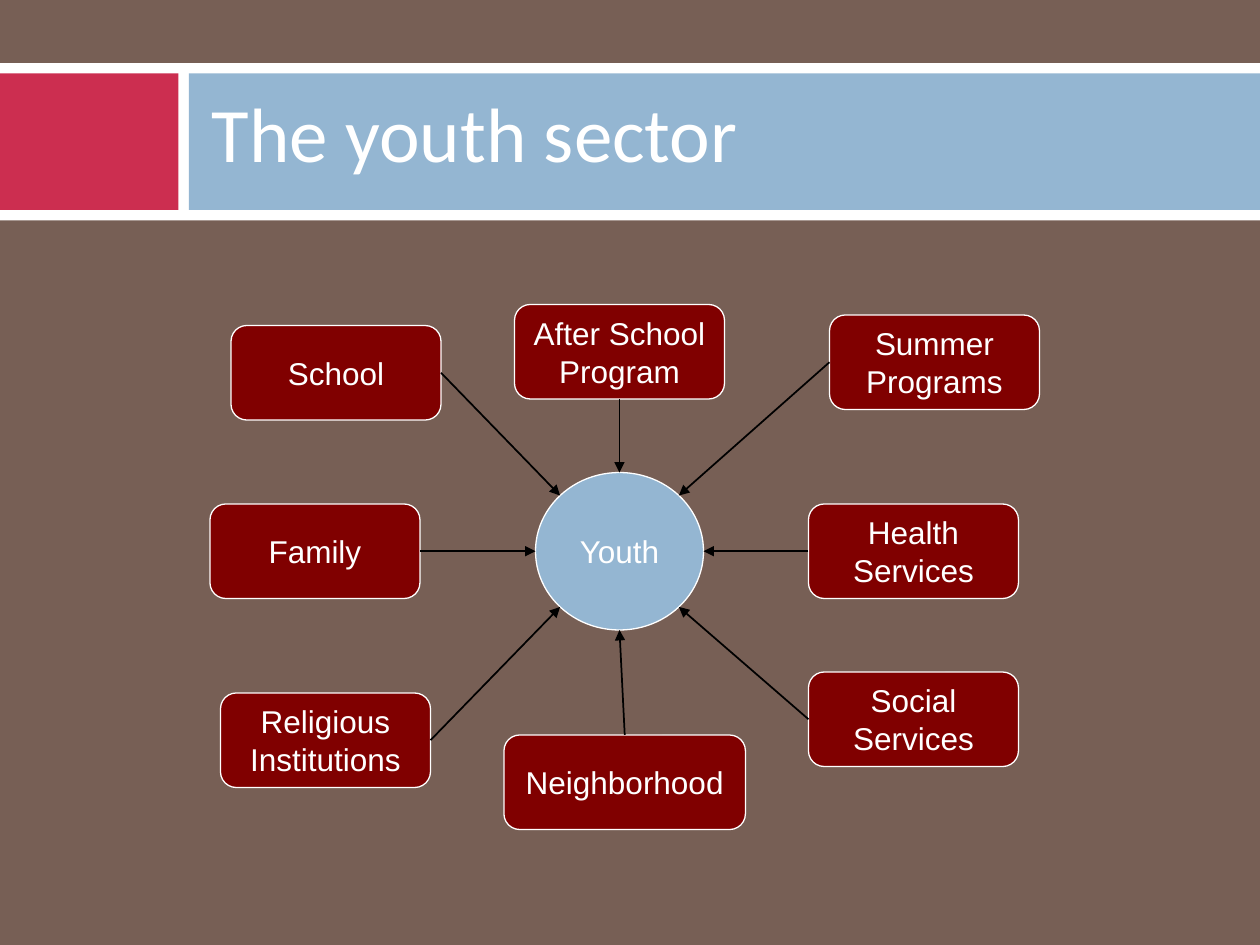
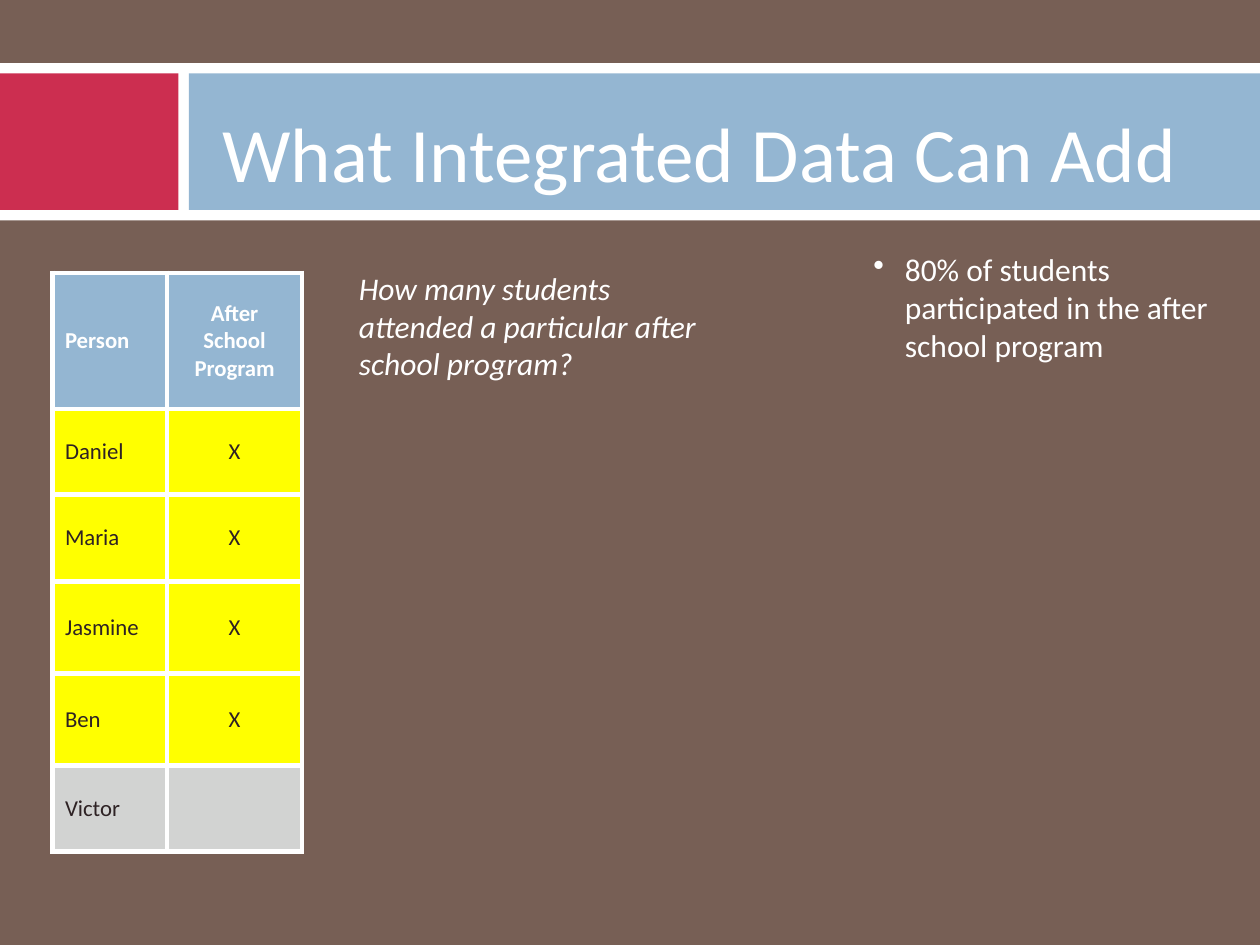
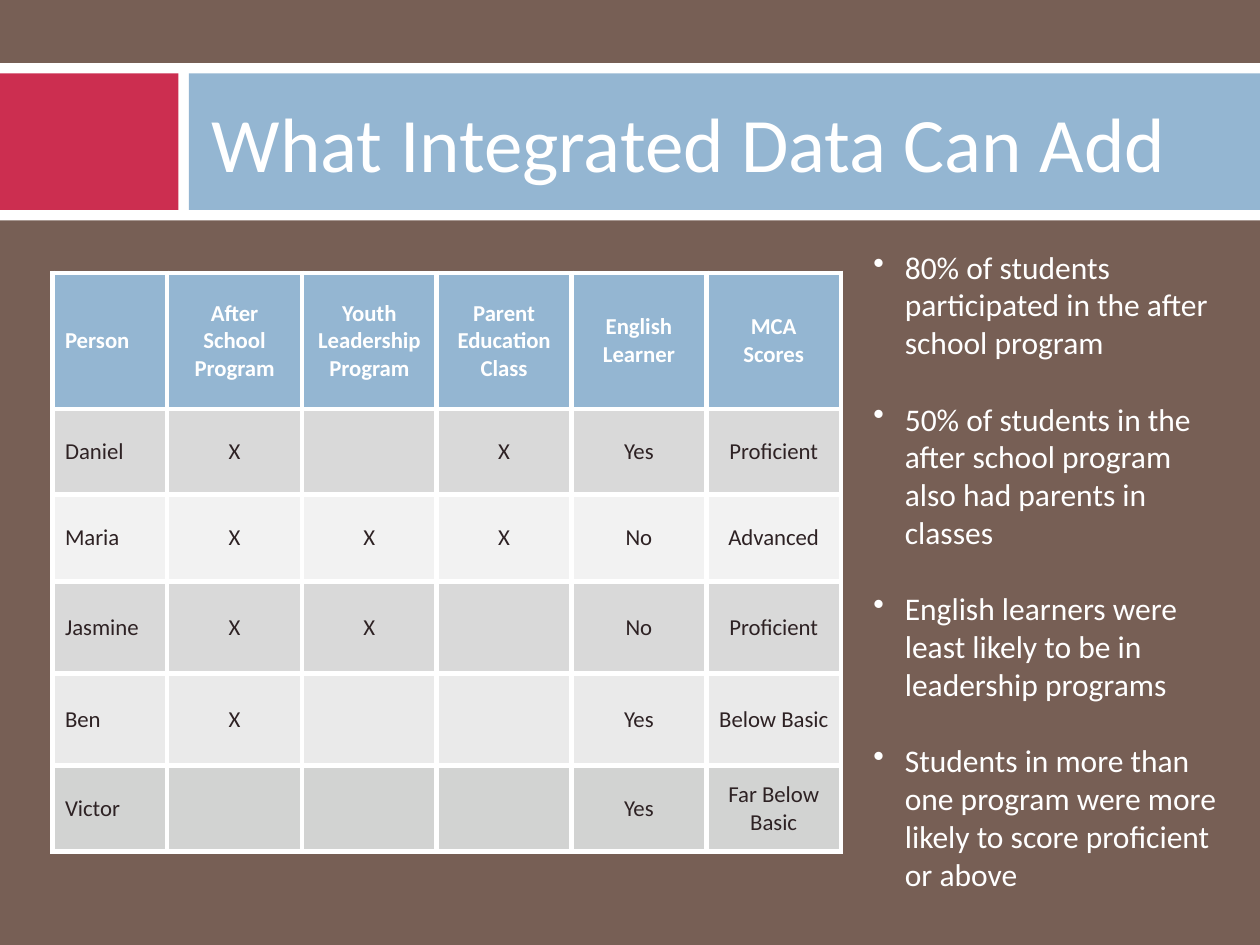
from math import hypot

from lxml.etree import SubElement
from pptx import Presentation
from pptx.dml.color import RGBColor
from pptx.enum.shapes import MSO_CONNECTOR, MSO_SHAPE
from pptx.enum.text import MSO_ANCHOR, PP_ALIGN
from pptx.oxml.ns import qn
from pptx.util import Inches, Pt

# Every position and size is given in grid units of a twelfth of an inch.
COLUMNS, ROWS, UNITS_PER_INCH = 120, 90, 12

BROWN, RED, BLUE, MAROON = "775F55", "CC2E50", "94B6D2", "800000"
WHITE, BLACK, INK, YELLOW, GREY = "FFFFFF", "000000", "2E2224", "FFFF00", "D2D3D2"

HEADER_BANDS = [
    ((0, 6, COLUMNS, 15), WHITE),
    ((0, 7, 17, 13), RED),
    ((18, 7, 102, 13), BLUE),
]

YOUTH = (51, 45, 16, 15)
BOX_HEIGHT = 9
LEFT, RIGHT, TOP, BOTTOM = 1, 3, 0, 2
# name, left, top, width, side the arrow leaves from, direction seen from Youth
SECTORS = [
    ("School", 22, 31, 20, RIGHT, (-1, -1)),
    ("After School Program", 49, 29, 20, BOTTOM, (0, -1)),
    ("Summer Programs", 79, 30, 20, LEFT, (1, -1)),
    ("Family", 20, 48, 20, RIGHT, (-1, 0)),
    ("Health Services", 77, 48, 20, LEFT, (1, 0)),
    ("Religious Institutions", 21, 66, 20, RIGHT, (-1, 1)),
    ("Neighborhood", 48, 70, 23, TOP, (0, 1)),
    ("Social Services", 77, 64, 20, LEFT, (1, 1)),
]

STUDENTS = [
    ["Person", "After School Program", "Youth Leadership Program",
     "Parent Education Class", "English Learner", "MCA Scores"],
    ["Daniel", "X", "", "X", "Yes", "Proficient"],
    ["Maria", "X", "X", "X", "No", "Advanced"],
    ["Jasmine", "X", "X", "", "No", "Proficient"],
    ["Ben", "X", "", "", "Yes", "Below Basic"],
    ["Victor", "", "", "", "Yes", "Far Below Basic"],
]
STUDENT_FILLS = ["D9D9D9", "F2F2F2", "D9D9D9", "EAEAEA", GREY]
NAME_WIDTH, COLUMN_WIDTH = 0.91, 1.07
ROW_HEIGHTS = [1.08, 0.68, 0.69, 0.73, 0.73, 0.68]

QUESTION = "How many students attended a particular after school program?"
FINDINGS = [
    "80% of students participated in the after school program",
    "50% of students in the after school program also had parents in classes",
    "English learners were least likely to be in leadership programs",
    "Students in more than one program were more likely to score proficient or above",
]


def units(value):
    return Inches(value / UNITS_PER_INCH)


def place(box):
    return [units(value) for value in box]


def color(hex_string):
    return RGBColor.from_string(hex_string)


def write(frame, paragraphs, size=18, font="Calibri", ink=WHITE, bold=False, italic=False,
          align=PP_ALIGN.LEFT, anchor=MSO_ANCHOR.TOP, bullets=False, gap=0):
    frame.word_wrap = True
    frame.vertical_anchor = anchor
    for index, text in enumerate(paragraphs):
        paragraph = frame.add_paragraph() if index else frame.paragraphs[0]
        paragraph.alignment = align
        paragraph.space_after = Pt(gap)
        run = paragraph.add_run()
        run.text = text
        run.font.size, run.font.name = Pt(size), font
        run.font.bold, run.font.italic = bold, italic
        run.font.color.rgb = color(ink)
        if bullets:
            properties = paragraph._p.get_or_add_pPr()
            properties.set("marL", str(Inches(0.25)))
            properties.set("indent", str(-Inches(0.25)))
            SubElement(properties, qn("a:buChar"), char="•")


def add_text(slide, box, paragraphs, **style):
    write(slide.shapes.add_textbox(*place(box)).text_frame, paragraphs, **style)


def add_filled(slide, kind, box, fill, outline=None):
    shape = slide.shapes.add_shape(kind, *place(box))
    shape.shadow.inherit = False
    shape.fill.solid()
    shape.fill.fore_color.rgb = color(fill)
    if outline:
        shape.line.color.rgb = color(outline)
        shape.line.width = Pt(0.75)
    else:
        shape.line.fill.background()
    return shape


def add_node(slide, kind, box, fill, label):
    node = add_filled(slide, kind, box, fill, WHITE)
    write(node.text_frame, [label], font="Arial", align=PP_ALIGN.CENTER,
          anchor=MSO_ANCHOR.MIDDLE)
    return node


def add_arrow(slide, node, side, end):
    """Draw an arrow from the middle of a node's side to a point in units."""
    target = place(end)
    arrow = slide.shapes.add_connector(MSO_CONNECTOR.STRAIGHT, *target, *target)
    arrow.begin_connect(node, side)
    arrow.line.color.rgb = color(BLACK)
    arrow.line.width = Pt(1)
    properties = arrow._element.spPr
    SubElement(properties.find(qn("a:ln")), qn("a:tailEnd"), type="triangle")
    SubElement(properties, qn("a:effectLst"))


def add_borders(cell):
    properties = cell._tc.get_or_add_tcPr()
    for edge in ("a:lnL", "a:lnR", "a:lnT", "a:lnB"):
        line = SubElement(properties, qn(edge), w=str(Pt(3)))
        SubElement(SubElement(line, qn("a:solidFill")), qn("a:srgbClr"), val=WHITE)


def add_student_table(slide, rows, student_fills):
    widths = [NAME_WIDTH] + [COLUMN_WIDTH] * (len(rows[0]) - 1)
    table = slide.shapes.add_table(
        len(rows), len(widths), units(5), units(26),
        Inches(sum(widths)), Inches(sum(ROW_HEIGHTS))).table
    for column, width in zip(table.columns, widths):
        column.width = Inches(width)
    for row, height in zip(table.rows, ROW_HEIGHTS):
        row.height = Inches(height)
    for row_index, (values, fill) in enumerate(zip(rows, [BLUE] + student_fills)):
        header = row_index == 0
        for column_index, value in enumerate(values):
            cell = table.cell(row_index, column_index)
            add_borders(cell)
            cell.fill.solid()
            cell.fill.fore_color.rgb = color(fill)
            cell.vertical_anchor = MSO_ANCHOR.MIDDLE
            if value:
                write(cell.text_frame, [value], size=13, ink=WHITE if header else INK,
                      bold=header, anchor=MSO_ANCHOR.MIDDLE,
                      align=PP_ALIGN.CENTER if column_index else PP_ALIGN.LEFT)


def add_titled_slide(presentation, title, left, top):
    slide = presentation.slides.add_slide(presentation.slide_layouts[6])
    slide.background.fill.solid()
    slide.background.fill.fore_color.rgb = color(BROWN)
    for box, fill in HEADER_BANDS:
        add_filled(slide, MSO_SHAPE.RECTANGLE, box, fill)
    add_text(slide, (left, top, COLUMNS - left, 13), [title], size=44,
             anchor=MSO_ANCHOR.MIDDLE)
    return slide


def build_sector_slide(presentation):
    slide = add_titled_slide(presentation, "The youth sector", 19, 6)
    add_node(slide, MSO_SHAPE.OVAL, YOUTH, BLUE, "Youth")
    left, top, width, height = YOUTH
    for name, box_left, box_top, box_width, side, (across, down) in SECTORS:
        node = add_node(slide, MSO_SHAPE.ROUNDED_RECTANGLE,
                        (box_left, box_top, box_width, BOX_HEIGHT), MAROON, name)
        reach = 2 * hypot(across, down)
        end = (left + width * (0.5 + across / reach), top + height * (0.5 + down / reach))
        add_arrow(slide, node, side, end)


def build_question_slide(presentation):
    slide = add_titled_slide(presentation, "What Integrated Data Can Add", 20, 8)
    rows = [values[:2] for values in STUDENTS]
    fills = [YELLOW if attended else GREY for _, attended in rows[1:]]
    add_student_table(slide, rows, fills)
    add_text(slide, (82, 23.25, 36, 16), FINDINGS[:1], bullets=True)
    add_text(slide, (33, 25, 36, 16), [QUESTION], italic=True)


def build_findings_slide(presentation):
    slide = add_titled_slide(presentation, "What Integrated Data Can Add", 19, 7)
    add_student_table(slide, STUDENTS, STUDENT_FILLS)
    add_text(slide, (82, 23, 36, 63), FINDINGS, bullets=True, gap=22)


def main():
    presentation = Presentation()
    presentation.slide_width, presentation.slide_height = units(COLUMNS), units(ROWS)
    build_sector_slide(presentation)
    build_question_slide(presentation)
    build_findings_slide(presentation)
    presentation.save("out.pptx")


if __name__ == "__main__":
    main()
